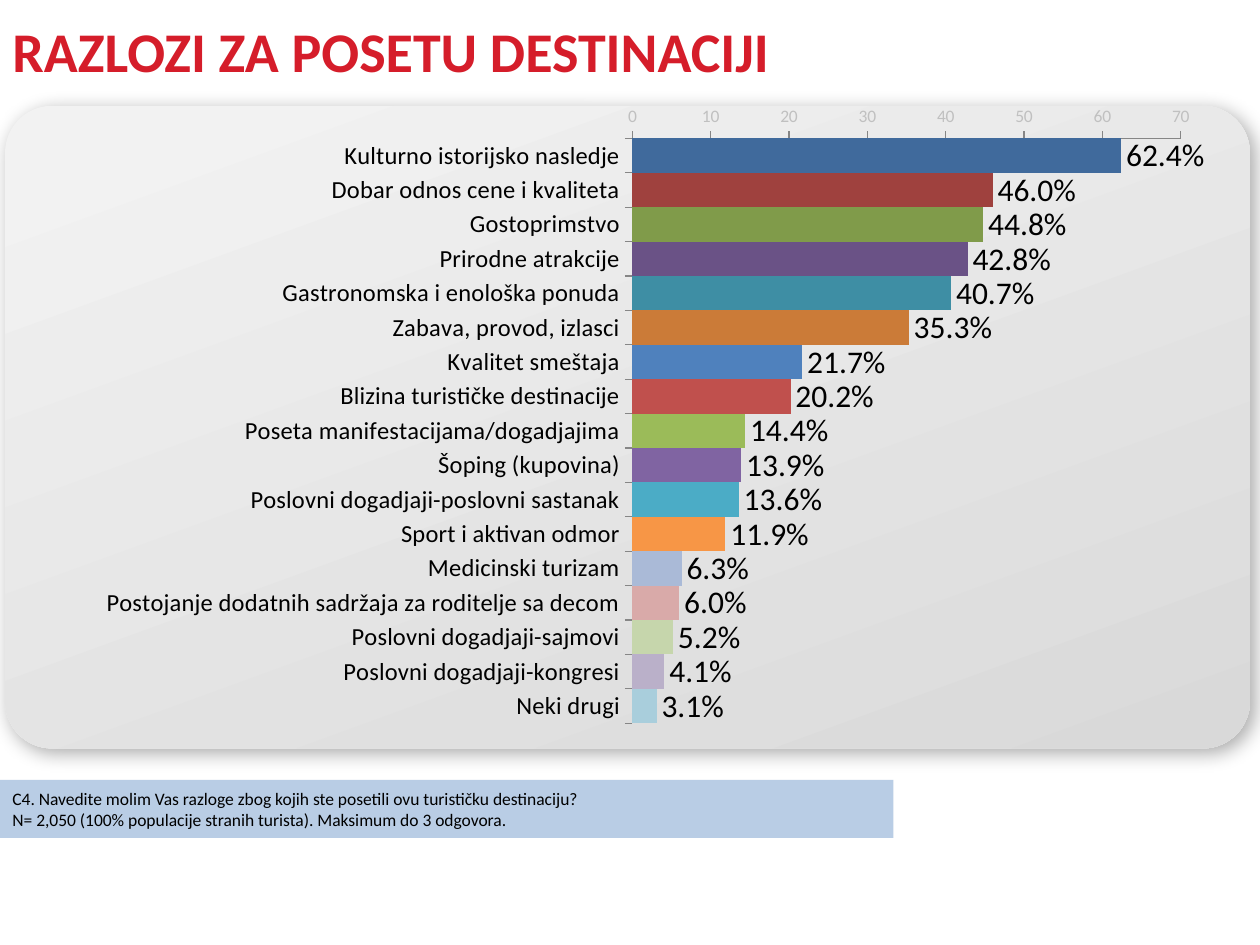
from lxml.etree import SubElement
from pptx import Presentation
from pptx.chart.data import CategoryChartData
from pptx.dml.color import RGBColor
from pptx.enum.chart import XL_CHART_TYPE, XL_LABEL_POSITION, XL_TICK_MARK
from pptx.enum.shapes import MSO_SHAPE
from pptx.enum.text import MSO_ANCHOR, PP_ALIGN
from pptx.oxml import parse_xml
from pptx.oxml.ns import nsdecls, qn
from pptx.util import Inches, Pt

# Content
TITLE = "RAZLOZI ZA POSETU DESTINACIJI"
NOTES = [
    "C4. Navedite molim Vas razloge zbog kojih ste posetili ovu turističku destinaciju?",
    "N= 2,050 (100% populacije stranih turista). Maksimum do 3 odgovora.",
]
REASONS = [
    ("Kulturno istorijsko nasledje", 62.4),
    ("Dobar odnos cene i kvaliteta", 46),
    ("Gostoprimstvo", 44.8),
    ("Prirodne atrakcije", 42.8),
    ("Gastronomska i enološka ponuda", 40.7),
    ("Zabava, provod, izlasci", 35.3),
    ("Kvalitet smeštaja", 21.7),
    ("Blizina turističke destinacije", 20.2),
    ("Poseta manifestacijama/dogadjajima", 14.4),
    ("Šoping (kupovina)", 13.9),
    ("Poslovni dogadjaji-poslovni sastanak", 13.6),
    ("Sport i aktivan odmor", 11.9),
    ("Medicinski turizam", 6.3),
    ("Postojanje dodatnih sadržaja za roditelje sa decom", 6),
    ("Poslovni dogadjaji-sajmovi", 5.2),
    ("Poslovni dogadjaji-kongresi", 4.1),
    ("Neki drugi", 3.1),
]
# Dark, base and light rounds of the same six hues
BAR_COLORS = [
    "406A9C", "9F413E", "809B4A", "6A5286", "3E8EA4", "CB7B38",
    "4F81BD", "C0504D", "9BBB59", "8064A2", "4BACC6", "F79646",
    "AABAD7", "D9AAA9", "C6D6AC", "BAB0C9", "A9CEDC",
]
COLORS = {
    "title": "D51D2A", "text": "000000", "note": "B9CDE5", "scale": "C0C0C0",
    "axis": "868686", "panel_top": "F2F2F2", "panel_end": "D9D9D9",
}
FONT = "Calibri"
PLOT = {"x": 0.502, "y": 0.068, "w": 0.468, "h": 0.903}


def rgb(name):
    return RGBColor.from_string(COLORS[name])


def set_font(font, size, color, bold=False):
    font.name, font.size, font.bold = FONT, Pt(size), bold
    font.color.rgb = rgb(color)


def box(left, top, width, height):
    return [Inches(v) for v in (left, top, width, height)]


prs = Presentation()
prs.slide_width, prs.slide_height = Inches(10), Inches(7.5)
s = prs.slides.add_slide(prs.slide_layouts[6])

# Rounded panel with gradient and soft shadow
panel = s.shapes.add_shape(MSO_SHAPE.ROUNDED_RECTANGLE, *box(0.04, 0.84, 9.88, 5.1))
panel.adjustments[0] = 0.073
panel.line.fill.background()
panel.fill.gradient()
panel.fill.gradient_angle = 290
stops = (("panel_top", 0.05), ("panel_end", 1))
for stop, (name, position) in zip(panel.fill.gradient_stops, stops):
    stop.color.rgb = rgb(name)
    stop.position = position
panel._element.spPr.append(parse_xml(
    f'<a:effectLst {nsdecls("a")}><a:outerShdw blurRad="{Pt(11)}" dist="{Pt(4)}" '
    'dir="2700000" algn="tl" rotWithShape="0"><a:srgbClr val="000000">'
    '<a:alpha val="32000"/></a:srgbClr></a:outerShdw></a:effectLst>'))

# Bar chart
data = CategoryChartData()
data.categories = [reason for reason, _ in REASONS]
data.add_series("Series 1", [share for _, share in REASONS])
chart = s.shapes.add_chart(
    XL_CHART_TYPE.BAR_CLUSTERED, *box(0.35, 0.75, 9.3, 5.14), data).chart
chart.has_legend = chart.has_title = False
set_font(chart.font, 18, "text")

plot = chart.plots[0]
plot.gap_width = 0
plot.vary_by_categories = False
for i, color in enumerate(BAR_COLORS):
    fill = plot.series[0].points[i].format.fill
    fill.solid()
    fill.fore_color.rgb = RGBColor.from_string(color)

labels = plot.series[0].data_labels
labels.show_value = True
labels.number_format, labels.number_format_is_linked = '#,##0.0"%"', False
labels.position = XL_LABEL_POSITION.OUTSIDE_END
set_font(labels.font, 18, "text")

for axis, size, color in ((chart.category_axis, 14, "text"),
                          (chart.value_axis, 10, "scale")):
    axis.has_major_gridlines = False
    axis.major_tick_mark = XL_TICK_MARK.OUTSIDE
    axis.minor_tick_mark = XL_TICK_MARK.NONE
    axis.format.line.color.rgb = rgb("axis")
    set_font(axis.tick_labels.font, size, color)
chart.category_axis.reverse_order = True
scale = chart.value_axis
scale.minimum_scale, scale.maximum_scale, scale.major_unit = 0, 70, 10
scale.tick_labels.number_format = "General"
scale.tick_labels.number_format_is_linked = False

# Fixed inner plot area
plot_area = chart._chartSpace.chart.plotArea
for old in plot_area.findall(qn("c:layout")):
    plot_area.remove(old)
layout = parse_xml(f'<c:layout {nsdecls("c")}><c:manualLayout/></c:layout>')
settings = {"layoutTarget": "inner", "xMode": "edge", "yMode": "edge", **PLOT}
for tag, value in settings.items():
    SubElement(layout[0], qn(f"c:{tag}")).set("val", str(value))
plot_area.insert(0, layout)

# Question note
note = s.shapes.add_shape(MSO_SHAPE.RECTANGLE, *box(0, 6.19, 7.09, 0.46))
note.shadow.inherit = False
note.fill.solid()
note.fill.fore_color.rgb = rgb("note")
note.line.fill.background()
tf = note.text_frame
tf.word_wrap = True
tf.vertical_anchor = MSO_ANCHOR.MIDDLE
for i, line in enumerate(NOTES):
    p = tf.add_paragraph() if i else tf.paragraphs[0]
    p.alignment = PP_ALIGN.LEFT
    r = p.add_run()
    r.text = line
    set_font(r.font, 10, "text")

# Title
tf = s.shapes.add_textbox(*box(0, -0.11, 10, 1.02)).text_frame
tf.word_wrap = True
tf.vertical_anchor = MSO_ANCHOR.MIDDLE
p = tf.paragraphs[0]
pPr = p._p.get_or_add_pPr()
pPr.set("marL", str(Inches(0.92)))
pPr.set("indent", str(Inches(-0.92)))
r = p.add_run()
r.text = TITLE
set_font(r.font, 32, "title", True)

prs.save("out.pptx")
